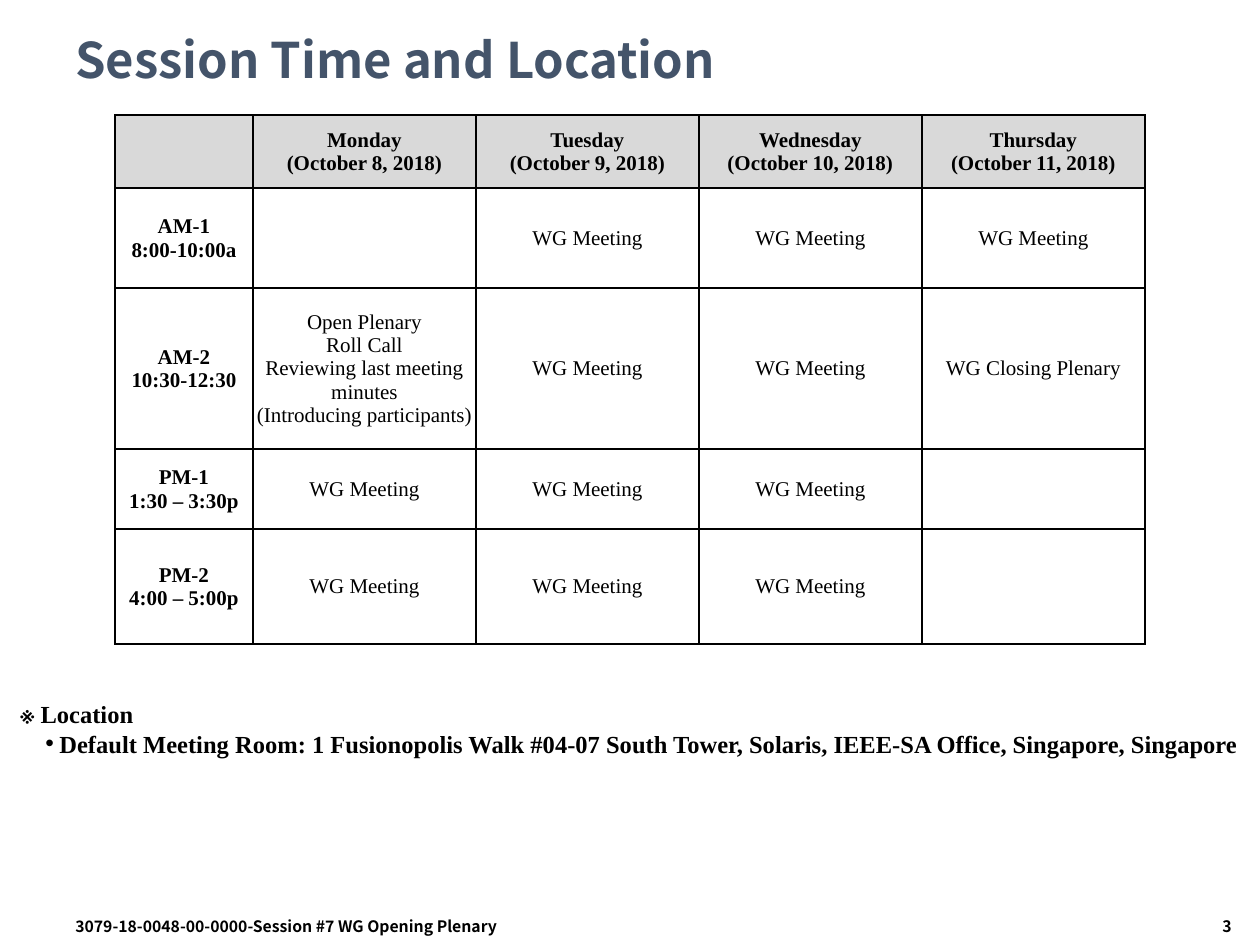
from lxml import etree
from pptx import Presentation
from pptx.dml.color import RGBColor
from pptx.enum.text import MSO_ANCHOR, PP_ALIGN
from pptx.oxml.ns import qn
from pptx.util import Pt

PX = 914400 / 126
LEFT, CENTER, RIGHT = PP_ALIGN.LEFT, PP_ALIGN.CENTER, PP_ALIGN.RIGHT
MIDDLE = MSO_ANCHOR.MIDDLE
SANS, SERIF = "Noto Sans CJK KR", "Times New Roman"
COLORS = {"title": "44546A", "text": "000000", "header": "D9D9D9", "body": "FFFFFF", "border": "000000"}


def px(length):
    return round(length * PX)


def write(frame, lines, size, face, color="text", bold=True, align=LEFT):
    for index, line in enumerate(lines):
        paragraph = frame.add_paragraph() if index else frame.paragraphs[0]
        paragraph.alignment = align
        run = paragraph.add_run()
        run.text = line
        run.font.size = Pt(size)
        run.font.name = face
        run.font.bold = bold
        run.font.color.rgb = RGBColor.from_string(COLORS[color])


prs = Presentation()
prs.slide_width, prs.slide_height = px(1260), px(945)
slide = prs.slides.add_slide(prs.slide_layouts[6])

title = slide.shapes.add_textbox(px(63), px(21), px(1134), px(84)).text_frame
title.word_wrap = True
title.vertical_anchor = MIDDLE
write(title, ["Session Time and Location"], 28, SANS, "title")
title.paragraphs[0].line_spacing = 0.9

MEETING = ["WG Meeting"]
OPENING = ["Open Plenary", "Roll Call", "Reviewing last meeting minutes", "(Introducing participants)"]
agenda = [
    [[], ["Monday", "(October 8, 2018)"], ["Tuesday", "(October 9, 2018)"],
     ["Wednesday", "(October 10, 2018)"], ["Thursday", "(October 11, 2018)"]],
    [["AM-1", "8:00-10:00a"], [], MEETING, MEETING, MEETING],
    [["AM-2", "10:30-12:30"], OPENING, MEETING, MEETING, ["WG Closing Plenary"]],
    [["PM-1", "1:30 – 3:30p"], MEETING, MEETING, MEETING, []],
    [["PM-2", "4:00 – 5:00p"], MEETING, MEETING, MEETING, []],
]
column_widths = [138] + [223] * 4
row_heights = [73, 100, 161, 80, 115]
schedule = slide.shapes.add_table(
    len(agenda), len(column_widths), px(115), px(115), px(sum(column_widths)), px(sum(row_heights))
).table
for column, width in zip(schedule.columns, column_widths):
    column.width = px(width)
for row, height in zip(schedule.rows, row_heights):
    row.height = px(height)

for r, slots in enumerate(agenda):
    for c, lines in enumerate(slots):
        cell = schedule.cell(r, c)
        cell.vertical_anchor = MIDDLE
        cell.margin_left = cell.margin_right = cell.margin_top = px(1)
        cell.margin_bottom = 0
        properties = cell._tc.get_or_add_tcPr()
        for side in ("a:lnL", "a:lnR", "a:lnT", "a:lnB"):
            border = etree.SubElement(properties, qn(side), w=str(Pt(1)))
            stroke = etree.SubElement(border, qn("a:solidFill"))
            etree.SubElement(stroke, qn("a:srgbClr"), val=COLORS["border"])
        cell.fill.solid()
        cell.fill.fore_color.rgb = RGBColor.from_string(COLORS["body" if r else "header"])
        write(cell.text_frame, lines, 12, SERIF, bold=r == 0 or c == 0, align=CENTER)

location = slide.shapes.add_textbox(px(8), px(693), px(1244), px(72)).text_frame
location.word_wrap = True
location.margin_right = 0
write(location, [
    "※ Location",
    "Default Meeting Room: 1 Fusionopolis Walk #04-07 South Tower, Solaris, IEEE-SA Office, Singapore, Singapore",
], 14, SERIF)
room = location.paragraphs[1]._p.get_or_add_pPr()
room.set("marL", str(px(39)))
room.set("indent", str(px(-14)))
etree.SubElement(room, qn("a:buFont"), typeface="Arial")
etree.SubElement(room, qn("a:buChar"), char="•")

for left, width, wording, align in (
    (63, 557, "3079-18-0048-00-0000-Session #7 WG Opening Plenary", LEFT),
    (1040, 204, "3", RIGHT),
):
    footer = slide.shapes.add_textbox(px(left), px(911), px(width), px(34)).text_frame
    footer.word_wrap = True
    write(footer, [wording], 9, SANS, align=align)

prs.save("out.pptx")
